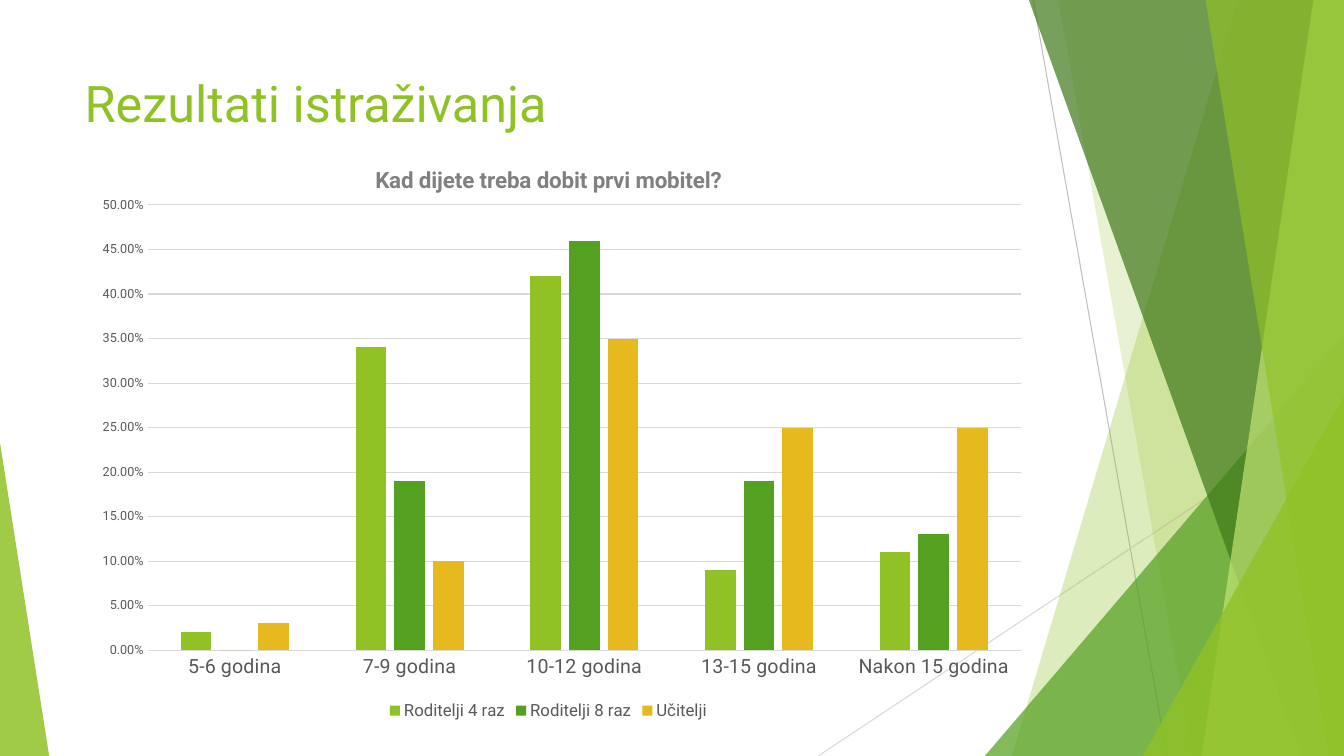
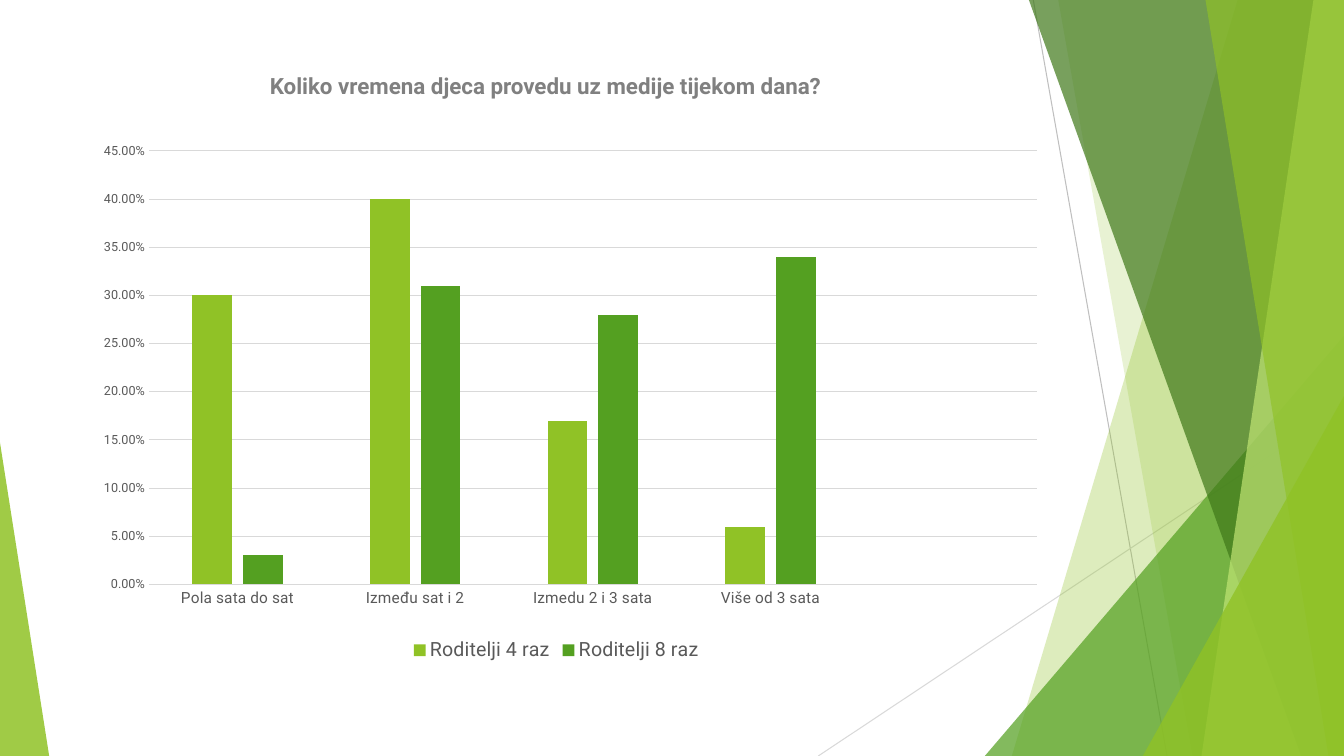
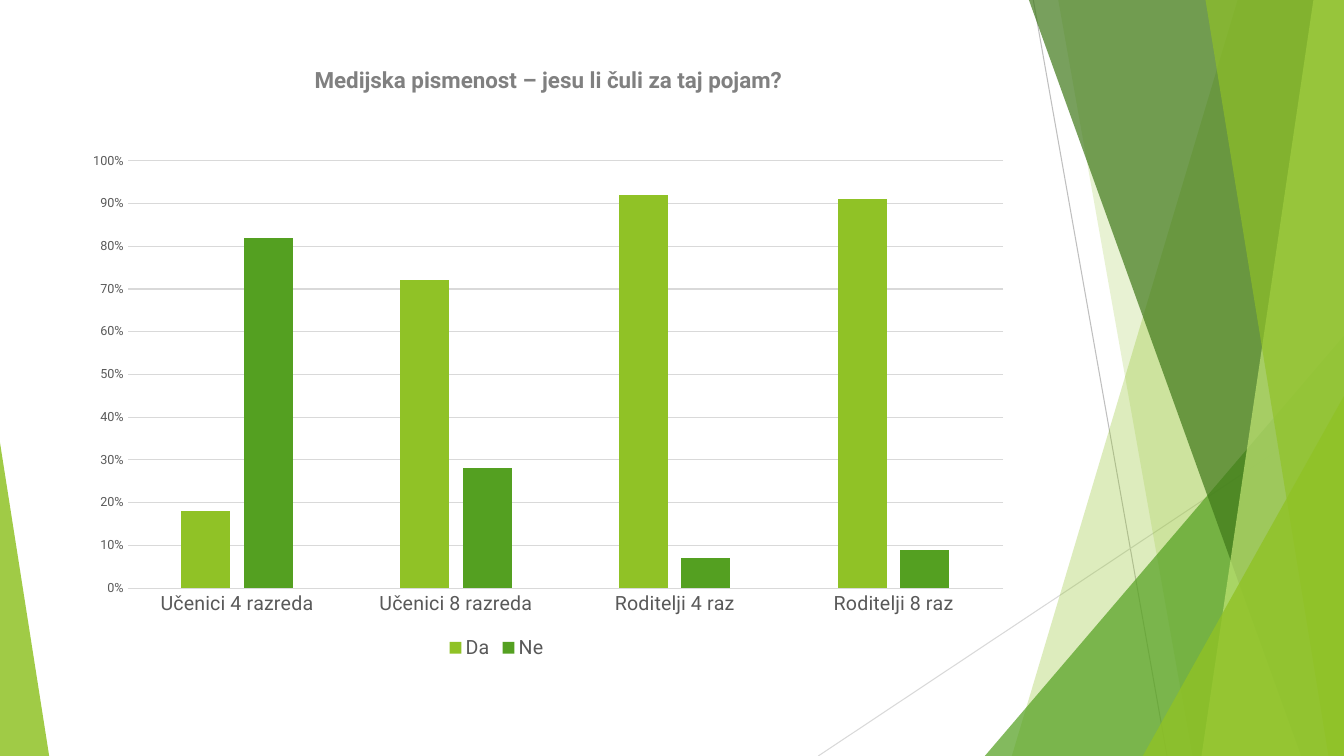
"""Builds three slides of survey results with column charts."""
import dataclasses

import lxml.etree
import pptx
import pptx.chart.data
import pptx.dml.color
import pptx.enum.chart
import pptx.enum.shapes
import pptx.enum.text
import pptx.oxml.ns
import pptx.util

Cm, Pt = pptx.util.Cm, pptx.util.Pt
qn = pptx.oxml.ns.qn


@dataclasses.dataclass(frozen=True)
class Theme:
    """Colours, type sizes and measures that all slides share."""
    font: str = "Roboto"
    lime: str = "90C226"
    green: str = "54A021"
    forest: str = "3F7819"
    pale: str = "C0E474"
    gold: str = "E6B91E"
    text: str = "595959"
    heading: str = "808080"
    grid: str = "D9D9D9"
    ray: str = "BFBFBF"
    title_size: int = 36
    question_size: int = 16
    large_size: int = 14
    legend_size: int = 12
    label_size: int = 11
    chart_size: int = 10
    value_size: int = 9
    line: float = 0.75
    width: float = 33.87
    height: float = 19.05
    left: float = 1.88
    content: float = 23.88


T = Theme()
TITLE = {"size": T.title_size, "color": T.lime}
QUESTION = {"size": T.question_size, "color": T.heading, "bold": True}
RAYS = [
    (26.04, 0, 29.41, T.height, T.ray),
    (T.width, 10.24, 20.62, T.height, T.grid),
]
BACK_FACETS = [(31.19, 25.5, T.lime, 30), (26.67, 30.05, T.lime, 20)]
FRONT_FACETS = [
    (25.93, 32.79, T.forest, 70),
    (33.1, 30.28, T.pale, 70),
    (30.38, 33.48, T.lime, 65),
]


def rgb(color):
    """Return a colour object for a hex string."""
    return pptx.dml.color.RGBColor.from_string(color)


def set_font(font, size, color, bold=False):
    """Apply the theme typeface with a size, colour and weight."""
    for name, value in {"name": T.font, "size": Pt(size), "bold": bold}.items():
        setattr(font, name, value)
    font.color.rgb = rgb(color)


def set_line(line, color):
    """Give a line the shared width and a colour."""
    line.color.rgb = rgb(color)
    line.width = Pt(T.line)


def paint(sp, color, opacity):
    """Fill a shape with a translucent colour and no outline."""
    sp.shadow.inherit = False
    sp.fill.solid()
    sp.fill.fore_color.rgb = rgb(color)
    sp.line.fill.background()
    clr = sp._element.spPr.find(".//" + qn("a:srgbClr"))
    lxml.etree.SubElement(clr, qn("a:alpha"), val=str(opacity * 1000))


def add_ray(shapes, x1, y1, x2, y2, color):
    """Draw a thin straight line."""
    kind = pptx.enum.shapes.MSO_CONNECTOR.STRAIGHT
    cxn = shapes.add_connector(kind, Cm(x1), Cm(y1), Cm(x2), Cm(y2))
    set_line(cxn.line, color)
    lxml.etree.SubElement(cxn._element.spPr, qn("a:effectLst"))


def add_facet(shapes, top_x, bottom_x, color, opacity):
    """Draw a full-height facet between a slanted edge and the right border."""
    fb = shapes.build_freeform(Cm(top_x), 0, scale=1.0)
    corners = [(T.width, 0), (T.width, T.height), (bottom_x, T.height)]
    fb.add_line_segments([(Cm(x), Cm(y)) for x, y in corners], close=True)
    paint(fb.convert_to_shape(), color, opacity)


def add_corner(shapes, left, top, right, peak, color, opacity):
    """Draw a triangle that stands on the bottom border."""
    kind = pptx.enum.shapes.MSO_SHAPE.ISOSCELES_TRIANGLE
    sp = shapes.add_shape(kind, Cm(left), Cm(top), Cm(right - left), Cm(T.height - top))
    sp.adjustments[0] = peak
    paint(sp, color, opacity)


def decorate_master(prs, s):
    """Build the facet group once and place it on the slide master."""
    grp = s.shapes.add_group_shape()
    for ray in RAYS:
        add_ray(grp.shapes, *ray)
    for facet in BACK_FACETS:
        add_facet(grp.shapes, *facet)
    add_corner(grp.shapes, 24.82, 8.46, T.width, 1, T.green, 72)
    for facet in FRONT_FACETS:
        add_facet(grp.shapes, *facet)
    add_corner(grp.shapes, 28.8, 9.98, T.width, 1, T.lime, 80)
    add_corner(grp.shapes, 0, 11.15, 1.24, 0, T.lime, 85)
    for number, el in enumerate(grp._element.iter(qn("p:cNvPr")), 100):
        el.set("id", str(number))
    prs.slide_master.shapes._spTree.insert(2, grp._element)


def set_title(s, text, top, height, fmt, align):
    """Place and format the title placeholder."""
    sp = s.shapes.title
    box = {"left": T.left, "top": top, "width": T.content, "height": height}
    for name, value in box.items():
        setattr(sp, name, Cm(value))
    tf = sp.text_frame
    tf.text = text
    frame = {
        "word_wrap": True,
        "auto_size": pptx.enum.text.MSO_AUTO_SIZE.NONE,
        "vertical_anchor": pptx.enum.text.MSO_ANCHOR.TOP,
    }
    for name, value in frame.items():
        setattr(tf, name, value)
    p = tf.paragraphs[0]
    p.alignment = align
    set_font(p.runs[0].font, **fmt)


def set_layout(el, x, y, w=None, h=None):
    """Fix a chart part at fractions of the chart area."""
    for old in el.findall(qn("c:layout")):
        el.remove(old)
    layout = lxml.etree.Element(qn("c:layout"))
    manual = lxml.etree.SubElement(layout, qn("c:manualLayout"))
    values = {"xMode": "edge", "yMode": "edge", "x": x, "y": y}
    if w is not None:
        values = {"layoutTarget": "inner", **values, "w": w, "h": h}
    for name, value in values.items():
        lxml.etree.SubElement(manual, qn("c:" + name), val=str(value))
    overlay = el.find(qn("c:overlay"))
    if overlay is None:
        el.insert(0, layout)
    else:
        overlay.addprevious(layout)


def format_axes(chart, label_size, maximum, unit, number_format):
    """Style the category and value axes."""
    none = pptx.enum.chart.XL_TICK_MARK.NONE
    cat, val = chart.category_axis, chart.value_axis
    for axis, size in ((cat, label_size), (val, T.value_size)):
        axis.major_tick_mark = axis.minor_tick_mark = none
        set_font(axis.tick_labels.font, size, T.text)
    set_line(cat.format.line, T.grid)
    scale = {"minimum_scale": 0, "maximum_scale": maximum, "major_unit": unit}
    for name, value in scale.items():
        setattr(val, name, value)
    val.format.line.fill.background()
    set_line(val.major_gridlines.format.line, T.grid)
    val.tick_labels.number_format = number_format
    val.tick_labels.number_format_is_linked = False


def add_columns(s, top, width, height, cats, series, plot, axes, legend_size):
    """Add a clustered column chart with a legend below and return it."""
    data = pptx.chart.data.CategoryChartData(number_format=axes["number_format"])
    data.categories = cats
    for name, values in series.items():
        data.add_series(name, values)
    kind = pptx.enum.chart.XL_CHART_TYPE.COLUMN_CLUSTERED
    chart = s.shapes.add_chart(kind, Cm(T.left), Cm(top), Cm(width), Cm(height), data).chart
    set_font(chart.font, T.chart_size, T.text)
    chart.has_title = False
    bars = chart.plots[0]
    for name, value in {"gap_width": 219, "overlap": -27, "vary_by_categories": False}.items():
        setattr(bars, name, value)
    for ser, color in zip(bars.series, (T.lime, T.green, T.gold)):
        ser.format.fill.solid()
        ser.format.fill.fore_color.rgb = rgb(color)
        ser.invert_if_negative = False
    format_axes(chart, **axes)
    chart.has_legend = True
    chart.legend.position = pptx.enum.chart.XL_LEGEND_POSITION.BOTTOM
    chart.legend.include_in_layout = False
    set_font(chart.legend.font, legend_size, T.text)
    set_layout(chart._chartSpace.chart.plotArea, *plot)
    return chart


def add_chart_title(chart, text, x, y):
    """Write a heading inside the chart."""
    tf = chart.chart_title.text_frame
    tf.text = text
    set_font(tf.paragraphs[0].runs[0].font, **QUESTION)
    set_layout(chart.chart_title._element, x, y)


def first_phone(s):
    """Fill the slide on the age for a first phone."""
    set_title(s, "Rezultati istraživanja", 1.7, 3.66, TITLE, pptx.enum.text.PP_ALIGN.LEFT)
    chart = add_columns(
        s, 3.63, T.content, 14.63,
        ["5-6 godina", "7-9 godina", "10-12 godina", "13-15 godina", "Nakon 15 godina"],
        {
            "Roditelji 4 raz": [0.02, 0.34, 0.42, 0.09, 0.11],
            "Roditelji 8 raz": [0, 0.19, 0.46, 0.19, 0.13],
            "Učitelji": [0.03, 0.1, 0.35, 0.25, 0.25],
        },
        (0.077, 0.105, 0.922, 0.767),
        {"label_size": T.large_size, "maximum": 0.5, "unit": 0.05, "number_format": "0.00%"},
        T.legend_size,
    )
    add_chart_title(chart, "Kad dijete treba dobit prvi mobitel?", 0.313, 0.031)


def media_time(s):
    """Fill the slide on daily time with media."""
    set_title(s, "Koliko vremena djeca provedu uz medije tijekom dana? ", 1.7, 1.9,
              QUESTION, pptx.enum.text.PP_ALIGN.CENTER)
    add_columns(
        s, 3.58, 24.28, 13.21,
        ["Pola sata do sat", "Između sat i 2", "Izmedu 2 i 3 sata", "Više od 3 sata", ""],
        {
            "Roditelji 4 raz": [0.3, 0.4, 0.17, 0.06, None],
            "Roditelji 8 raz": [0.03, 0.31, 0.28, 0.34, None],
        },
        (0.077, 0.017, 0.922, 0.827),
        {"label_size": T.label_size, "maximum": 0.45, "unit": 0.05, "number_format": "0.00%"},
        T.large_size,
    )


def media_literacy(s):
    """Fill the slide on media literacy."""
    set_title(s, "Medijska pismenost – jesu li čuli za taj pojam?", 1.55, 1.45,
              QUESTION, pptx.enum.text.PP_ALIGN.CENTER)
    chart = add_columns(
        s, 3.58, T.content, 13.18,
        ["Učenici 4 razreda", "Učenici 8 razreda", "Roditelji 4 raz", "Roditelji 8 raz"],
        {"Da": [0.18, 0.72, 0.92, 0.91], "Ne ": [0.82, 0.28, 0.07, 0.09]},
        (0.056, 0.036, 0.924, 0.817),
        {"label_size": T.large_size, "maximum": 1, "unit": 0.1, "number_format": "0%"},
        T.large_size,
    )
    set_layout(chart.legend._element, 0.389, 0.942)


def main():
    """Build and save the presentation."""
    prs = pptx.Presentation()
    prs.slide_width, prs.slide_height = Cm(T.width), Cm(T.height)
    title_only = prs.slide_layouts[5]
    for number, fill in enumerate((first_phone, media_time, media_literacy)):
        s = prs.slides.add_slide(title_only)
        if number == 0:
            decorate_master(prs, s)
        fill(s)
    prs.save("out.pptx")


if __name__ == "__main__":
    main()
